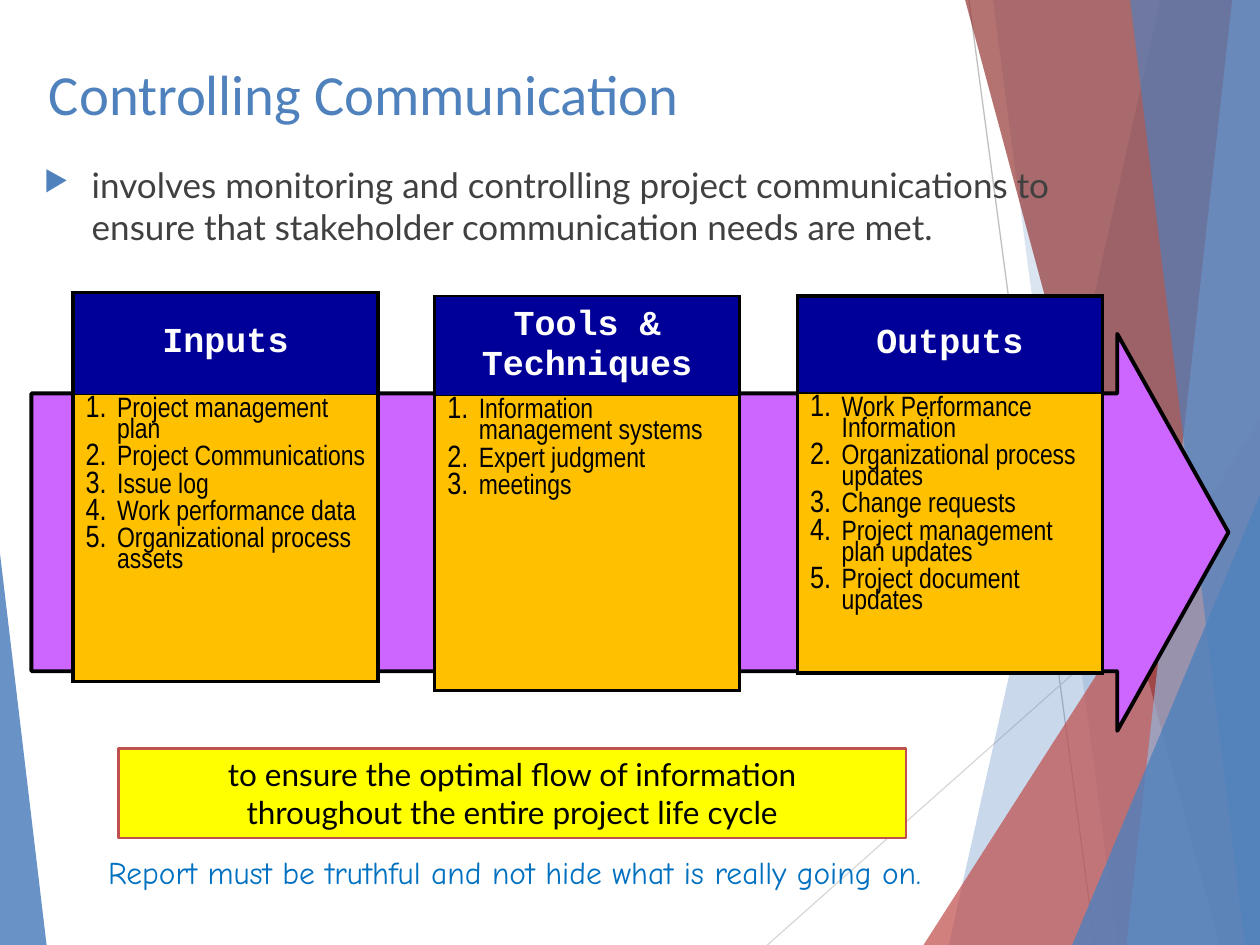
from dataclasses import dataclass

from lxml.etree import SubElement
from pptx import Presentation
from pptx.dml.color import RGBColor
from pptx.enum.shapes import MSO_CONNECTOR, MSO_SHAPE
from pptx.enum.text import MSO_ANCHOR, PP_ALIGN
from pptx.oxml.ns import qn
from pptx.util import Inches, Pt


@dataclass(frozen=True)
class Theme:
    blue: str = "4F81BD"
    pale: str = "95B3D7"
    red: str = "C0504D"
    wine: str = "953735"
    black: str = "000000"
    white: str = "FFFFFF"
    body: str = "404040"
    navy: str = "000099"
    gold: str = "FFC000"
    violet: str = "CC66FF"
    yellow: str = "FFFF00"
    note: str = "0070C0"
    rule: str = "BFBFBF"
    faint: str = "D9D9D9"
    title_size: float = 32.4
    head_size: int = 20
    note_size: int = 18
    list_size: int = 16


T = Theme()
WIDE, HIGH = 10, 7.5

# Left, top, head height, list height, top border, heading, items
PANELS = [
    (0.58, 2.32, 0.81, 2.28, 2.25, "Inputs",
     ["Project management plan", "Project Communications", "Issue log",
      "Work performance data", "Organizational process assets"]),
    (3.45, 2.35, 0.79, 2.34, 1, "Tools & Techniques",
     ["Information management systems", "Expert judgment", "meetings"]),
    (6.33, 2.35, 0.77, 2.15, 2.25, "Outputs",
     ["Work Performance Information", "Organizational process updates",
      "Change requests", "Project management plan updates",
      "Project document updates"]),
]


def rgb(code):
    return RGBColor.from_string(code)


def add(parent, tag, **attrs):
    return SubElement(parent, qn(tag), attrs)


def paint(shape, fill, alpha=100, line=None, width=1):
    shape.shadow.inherit = False
    shape.fill.solid()
    shape.fill.fore_color.rgb = rgb(fill)
    if alpha < 100:
        color = shape.fill._xPr.find(qn("a:solidFill"))[0]
        add(color, "a:alpha", val=str(alpha * 1000))
    if line:
        shape.line.color.rgb = rgb(line)
        shape.line.width = Pt(width)
    else:
        shape.line.fill.background()


def write(frame, text, font, size, color, bold=False, align=PP_ALIGN.LEFT,
          space=0, lead=None, indent=0, mark=None):
    """Fill a frame, one paragraph a line; mark makes the bullet."""
    frame.word_wrap = True
    for i, line in enumerate(text.split("\n")):
        para = frame.add_paragraph() if i else frame.paragraphs[0]
        para.alignment = align
        para.space_before = Pt(space)
        if lead:
            para.line_spacing = lead
        run = para.add_run()
        run.text = line
        run.font.name, run.font.size = font, Pt(size)
        run.font.bold, run.font.color.rgb = bold, rgb(color)
        if mark:
            props = para._p.get_or_add_pPr()
            props.set("marL", str(Inches(indent)))
            props.set("indent", str(-Inches(indent)))
            mark(props)


def arrow_mark(props):
    add(add(props, "a:buClr"), "a:srgbClr", val=T.blue)
    add(props, "a:buSzPct", val="80000")
    add(props, "a:buChar", char="▶")


def number_mark(props):
    add(props, "a:buSzPct", val="110000")
    add(props, "a:buFont", typeface="Arial Narrow")
    add(props, "a:buAutoNum", type="arabicPeriod")


def put_text(slide, box, text, **form):
    frame = slide.shapes.add_textbox(*map(Inches, box)).text_frame
    write(frame, text, **form)


def put_shape(slide, kind, box, fill, adjust=(), **look):
    shape = slide.shapes.add_shape(kind, *map(Inches, box))
    for i, value in enumerate(adjust):
        shape.adjustments[i] = value
    paint(shape, fill, **look)
    return shape


def put_line(slide, ends, color):
    line = slide.shapes.add_connector(MSO_CONNECTOR.STRAIGHT, *map(Inches, ends))
    line.line.color.rgb = rgb(color)
    line.line.width = Pt(0.75)
    add(line._element.spPr, "a:effectLst")


def put_band(slide, top, foot, fill, alpha):
    """Fill from a slanted left edge to the right side of the slide."""
    pen = slide.shapes.build_freeform(Inches(top), 0)
    pen.add_line_segments([(Inches(x), Inches(y)) for x, y in
                           [(WIDE, 0), (WIDE, HIGH), (foot, HIGH)]])
    paint(pen.convert_to_shape(), fill, alpha)


def draw_backdrop(slide):
    put_line(slide, (7.69, 0, 8.69, HIGH), T.rule)
    put_line(slide, (WIDE, 4.03, 6.09, HIGH), T.faint)
    tri = MSO_SHAPE.ISOSCELES_TRIANGLE
    put_band(slide, 9.21, 7.53, T.blue, 30)
    put_band(slide, 7.88, 8.87, T.blue, 20)
    put_shape(slide, tri, (7.33, 3.33, 2.67, 4.17), T.red, [1], alpha=72)
    put_band(slide, 7.66, 9.68, T.wine, 70)
    put_band(slide, 9.78, 8.94, T.pale, 70)
    put_band(slide, 8.97, 9.88, T.blue, 65)
    put_shape(slide, tri, (8.51, 3.93, 1.49, 3.57), T.blue, [1], alpha=80)
    put_shape(slide, tri, (0, 4.39, 0.37, 3.11), T.blue, [0], alpha=85)


def style_cell(cell, fill, top, foot):
    props = cell._tc.get_or_add_tcPr()
    for side, width in zip("LRTB", (2.25, 2.25, top, foot)):
        line = add(props, f"a:ln{side}", w=str(Pt(width)))
        add(add(line, "a:solidFill"), "a:srgbClr", val=T.black)
    cell.fill.solid()
    cell.fill.fore_color.rgb = rgb(fill)


def put_panel(slide, left, top, head, deep, edge, title, items):
    box = map(Inches, (left, top, 2.42, head + deep))
    table = slide.shapes.add_table(2, 1, *box).table
    table.first_row = table.horz_banding = False
    for row, height in zip(table.rows, (head, deep)):
        row.height = Inches(height)
    name, body = table.cell(0, 0), table.cell(1, 0)
    style_cell(name, T.navy, edge, 1)
    style_cell(body, T.gold, 1, 2.25)
    name.vertical_anchor = MSO_ANCHOR.MIDDLE
    write(name.text_frame, title, font="Courier New", size=T.head_size,
          color=T.white, bold=True, align=PP_ALIGN.CENTER)
    write(body.text_frame, "\n".join(items), font="Arial Narrow",
          size=T.list_size, color=T.black, space=3.6, lead=0.8,
          indent=0.25, mark=number_mark)


def main():
    deck = Presentation()
    deck.slide_width, deck.slide_height = Inches(WIDE), Inches(HIGH)
    slide = deck.slides.add_slide(deck.slide_layouts[6])
    draw_backdrop(slide)
    put_text(slide, (0.29, 0.42, 8.33, 0.5), "Controlling Communication",
             font="Calibri", size=T.title_size, color=T.blue)
    put_text(slide, (0.25, 1.25, 8.33, 1.25),
             "involves monitoring and controlling project communications to "
             "ensure that stakeholder communication needs are met.",
             font="Lato", size=T.head_size, color=T.body,
             indent=0.38, mark=arrow_mark)
    put_shape(slide, MSO_SHAPE.RIGHT_ARROW, (0.25, 2.65, 9.5, 3.15), T.violet,
              [0.7, 0.28], line=T.black, width=2.25)
    for panel in PANELS:
        put_panel(slide, *panel)
    put_text(slide, (0, 6.72, 8.17, 0.4),
             "Report must be truthful and not hide what is really going on.",
             font="Comic Neue", size=T.note_size, color=T.note,
             align=PP_ALIGN.CENTER)
    goal = put_shape(slide, MSO_SHAPE.RECTANGLE, (0.94, 5.94, 6.25, 0.71),
                     T.yellow, line=T.red, width=1.5)
    write(goal.text_frame, "to ensure the optimal flow of information\n"
          "throughout the entire project life cycle", font="Lato",
          size=T.note_size, color=T.black, align=PP_ALIGN.CENTER)
    deck.save("out.pptx")


if __name__ == "__main__":
    main()
